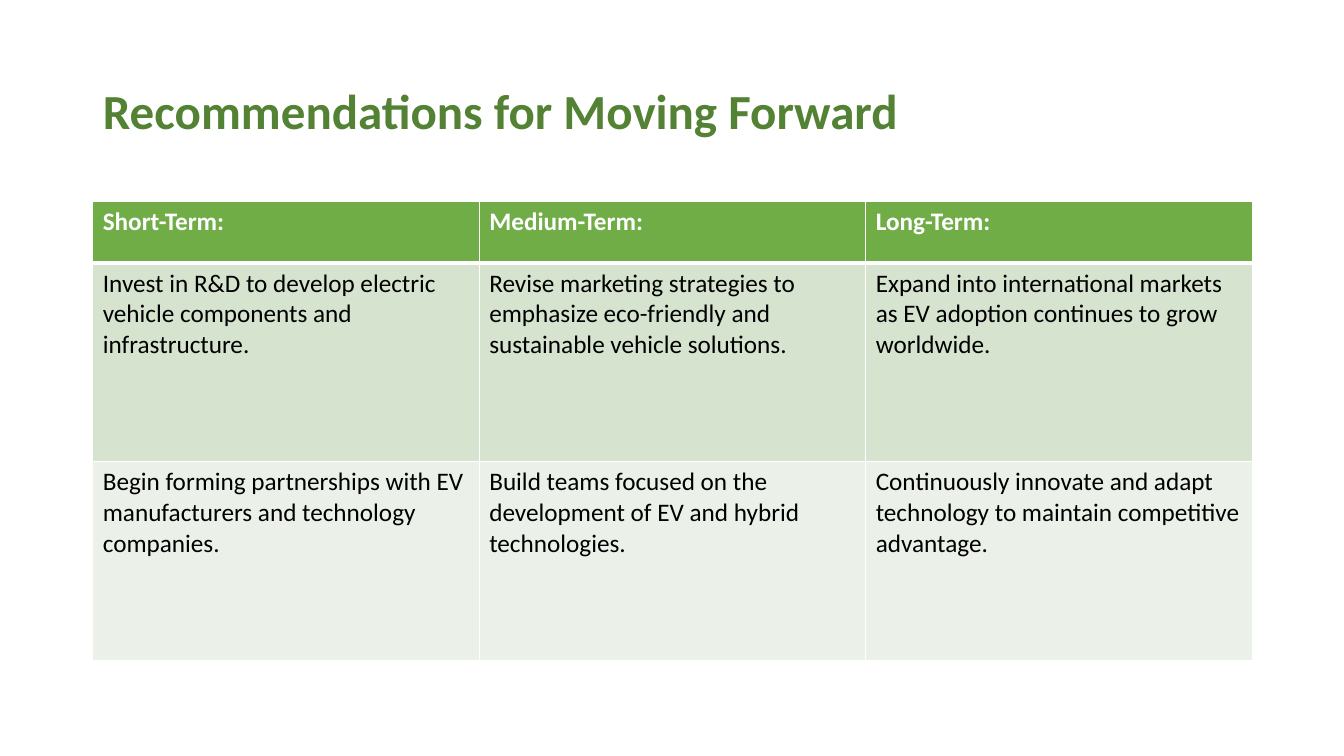
from dataclasses import dataclass

from lxml.etree import SubElement
from pptx import Presentation
from pptx.dml.color import RGBColor
from pptx.enum.text import MSO_ANCHOR, PP_ALIGN
from pptx.oxml.ns import qn
from pptx.util import Inches, Pt


@dataclass(frozen=True)
class Theme:
    font: str = "Calibri"
    title_size: int = 35
    table_size: int = 18
    title: str = "548235"
    header: str = "70AD47"
    header_text: str = "FFFFFF"
    body_text: str = "000000"
    bands: tuple = ("D5E3CF", "EBF1E9")
    border: str = "FFFFFF"
    thin: int = 1
    thick: int = 3


THEME = Theme()
LEFT, WIDTH = 0.92, 11.5
HEADER_HEIGHT, BODY_HEIGHT = 0.61, 1.97
TITLE = "Recommendations for Moving Forward"
RECOMMENDATIONS = [
    ("Short-Term:", "Medium-Term:", "Long-Term:"),
    (
        "Invest in R&D to develop electric vehicle components and infrastructure.",
        "Revise marketing strategies to emphasize eco-friendly and sustainable vehicle solutions.",
        "Expand into international markets as EV adoption continues to grow worldwide.",
    ),
    (
        "Begin forming partnerships with EV manufacturers and technology companies.",
        "Build teams focused on the development of EV and hybrid technologies.",
        "Continuously innovate and adapt technology to maintain competitive advantage.",
    ),
]


def format_text(frame, size, color, bold):
    for para in frame.paragraphs:
        para.alignment = PP_ALIGN.LEFT
        for span in para.runs:
            span.font.name = THEME.font
            span.font.size = Pt(size)
            span.font.bold = bold
            span.font.color.rgb = RGBColor.from_string(color)


def add_title(page, text):
    title = page.shapes.title
    title.left, title.top = Inches(LEFT), Inches(0.4)
    title.width, title.height = Inches(WIDTH), Inches(1.45)
    frame = title.text_frame
    frame.text = text
    frame.word_wrap = True
    frame.vertical_anchor = MSO_ANCHOR.MIDDLE
    frame.paragraphs[0].line_spacing = 0.9
    format_text(frame, THEME.title_size, THEME.title, True)


def set_borders(cell, top, bottom):
    """Draw all four cell edges; top and bottom are widths in points."""
    properties = cell._tc.get_or_add_tcPr()
    edges = {"lnL": THEME.thin, "lnR": THEME.thin, "lnT": top, "lnB": bottom}
    for edge, width in edges.items():
        line = SubElement(properties, qn(f"a:{edge}"), w=str(Pt(width)))
        fill = SubElement(line, qn("a:solidFill"))
        SubElement(fill, qn("a:srgbClr"), val=THEME.border)


def format_cell(cell, row):
    is_header = row == 0
    set_borders(
        cell,
        top=THEME.thick if row == 1 else THEME.thin,
        bottom=THEME.thick if is_header else THEME.thin,
    )
    color = THEME.header if is_header else THEME.bands[(row - 1) % 2]
    cell.fill.solid()
    cell.fill.fore_color.rgb = RGBColor.from_string(color)
    text_color = THEME.header_text if is_header else THEME.body_text
    format_text(cell.text_frame, THEME.table_size, text_color, is_header)


def add_recommendation_table(page, rows):
    heights = [HEADER_HEIGHT] + [BODY_HEIGHT] * (len(rows) - 1)
    table = page.shapes.add_table(
        len(rows), len(rows[0]),
        Inches(LEFT), Inches(2), Inches(WIDTH), Inches(sum(heights)),
    ).table
    for row, (texts, height) in enumerate(zip(rows, heights)):
        table.rows[row].height = Inches(height)
        for column, text in enumerate(texts):
            cell = table.cell(row, column)
            cell.text_frame.text = text
            format_cell(cell, row)


def main():
    deck = Presentation()
    deck.slide_width, deck.slide_height = Inches(13.33), Inches(7.5)
    title_only = deck.slide_layouts[5]
    page = deck.slides.add_slide(title_only)
    add_title(page, TITLE)
    add_recommendation_table(page, RECOMMENDATIONS)
    deck.save("out.pptx")


if __name__ == "__main__":
    main()
